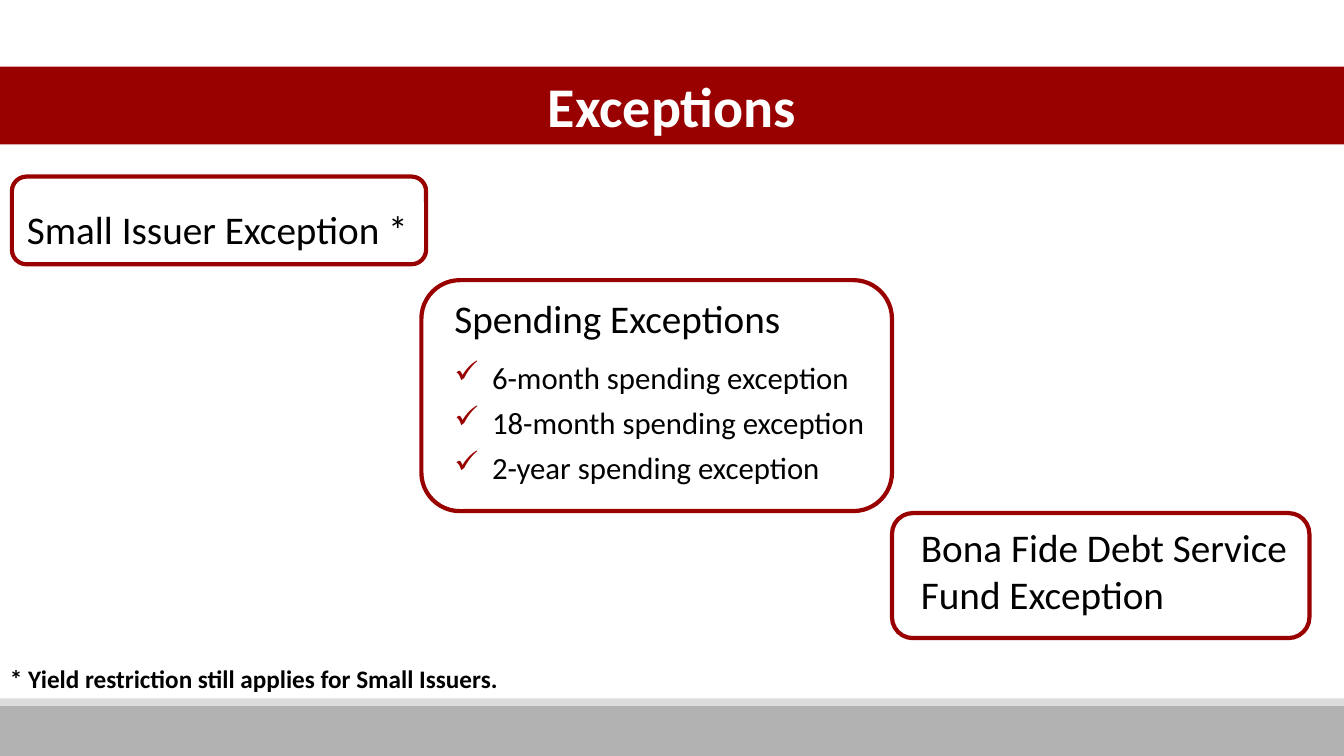
import pptx
import pptx.util
import pptx.dml.color
import pptx.enum.shapes
import pptx.enum.text
import pptx.oxml.ns
import lxml.etree

Cm = pptx.util.Cm
Pt = pptx.util.Pt
KIND = pptx.enum.shapes.MSO_SHAPE
HUE = {"red": "990000", "gray": "B2B2B2", "pale": "DDDDDD",
       "white": "FFFFFF", "black": "000000"}
WIDE = 33.87


def color(name):
    """Return the named colour."""
    return pptx.dml.color.RGBColor.from_string(HUE[name])


def add_bar(slide, top, high, fill):
    """Add a filled band across the slide."""
    bar = slide.shapes.add_shape(KIND.RECTANGLE, 0, Cm(top), Cm(WIDE), Cm(high))
    bar.shadow.inherit = False
    bar.fill.solid()
    bar.fill.fore_color.rgb = color(fill)
    bar.line.fill.background()
    return bar


def add_frame(slide, left, top, width, high):
    """Add a rounded red outline."""
    frame = slide.shapes.add_shape(
        KIND.ROUNDED_RECTANGLE, Cm(left), Cm(top), Cm(width), Cm(high))
    frame.shadow.inherit = False
    frame.fill.background()
    frame.line.color.rgb = color("red")
    frame.line.width = Pt(3)


def add_box(slide, left, top, width, high):
    """Add a wrapping text box and return its text frame."""
    box = slide.shapes.add_textbox(Cm(left), Cm(top), Cm(width), Cm(high))
    box.text_frame.word_wrap = True
    return box.text_frame


def write(para, text, size, hue="black", bold=False, after=0):
    """Write one run into a paragraph."""
    run = para.add_run()
    run.text = text
    run.font.name = "Calibri"
    run.font.size = Pt(size)
    run.font.bold = bold
    run.font.color.rgb = color(hue)
    para.space_after = Pt(after)


def add_check(para):
    """Give a paragraph a hanging red check mark."""
    props = para._p.get_or_add_pPr()
    props.set("marL", str(Cm(0.95)))
    props.set("indent", str(-Cm(0.95)))
    qn = pptx.oxml.ns.qn
    tint = lxml.etree.SubElement(props, qn("a:buClr"))
    lxml.etree.SubElement(tint, qn("a:srgbClr"), val=HUE["red"])
    lxml.etree.SubElement(props, qn("a:buChar"), char="✓")


def main():
    """Build the slide and save it."""
    deck = pptx.Presentation()
    deck.slide_width = Cm(WIDE)
    deck.slide_height = Cm(19.05)
    slide = deck.slides.add_slide(deck.slide_layouts[6])

    add_bar(slide, 17.78, 1.27, "gray")
    add_bar(slide, 17.6, 0.18, "pale")
    title = add_bar(slide, 1.68, 1.96, "red").text_frame
    title.vertical_anchor = pptx.enum.text.MSO_ANCHOR.MIDDLE
    title.paragraphs[0].alignment = pptx.enum.text.PP_ALIGN.CENTER
    write(title.paragraphs[0], "Exceptions", 40, "white", True)

    small = add_box(slide, 0.43, 4.45, 10.21, 1.85).paragraphs[0]
    small.line_spacing = 1.5
    write(small, "Small Issuer Exception *", 28, after=3)

    fund = add_box(slide, 22.96, 13.06, 10.49, 3.68)
    fund.margin_left = Cm(0.25)
    fund.margin_right = 0
    write(fund.paragraphs[0], "Bona Fide Debt Service Fund Exception", 28)

    spend = add_box(slide, 11.2, 7.3, 11.53, 5.13)
    write(spend.paragraphs[0], "Spending Exceptions", 28, after=12)
    for term in ("6-month", "18-month", "2-year"):
        para = spend.add_paragraph()
        write(para, f"{term} spending exception", 22, after=6)
        add_check(para)

    for place in ((0.3, 4.45, 10.44, 2.21),
                  (10.62, 7.06, 11.86, 5.82),
                  (22.48, 12.93, 10.52, 3.15)):
        add_frame(slide, *place)

    note = add_box(slide, 0, 16.59, 23.42, 1.02).paragraphs[0]
    write(note, "* Yield restriction still applies for Small Issuers.", 18, bold=True)
    deck.save("out.pptx")


if __name__ == "__main__":
    main()
